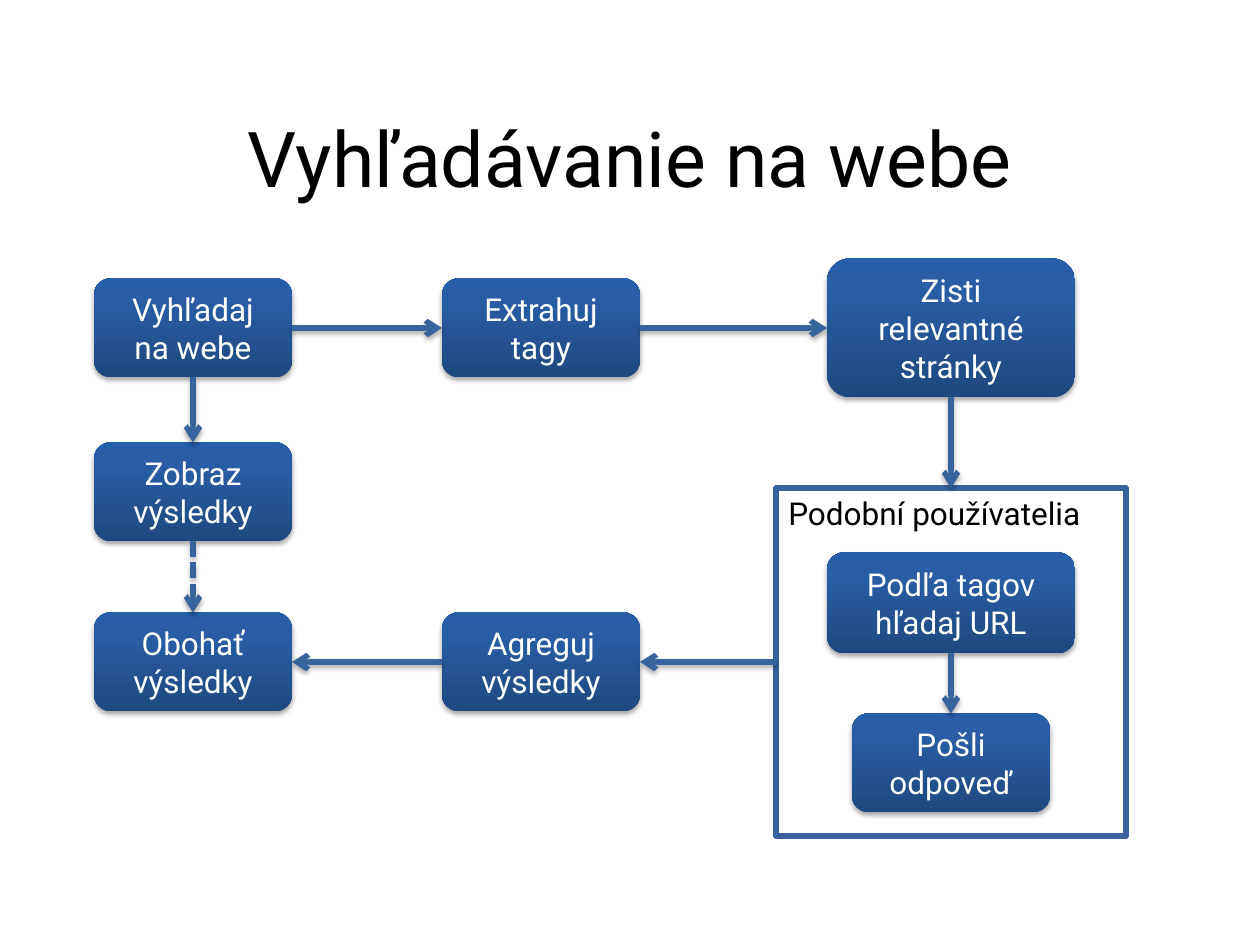
"""Build the web search flow slide."""
from dataclasses import dataclass

from pptx import Presentation
from pptx.dml.color import RGBColor
from pptx.enum.dml import MSO_LINE
from pptx.enum.shapes import MSO_CONNECTOR, MSO_SHAPE
from pptx.enum.text import MSO_ANCHOR, PP_ALIGN
from pptx.oxml import parse_xml
from pptx.oxml.ns import nsdecls
from pptx.util import Pt

PX = 914400 / 126
ROUNDED = MSO_SHAPE.FLOWCHART_ALTERNATE_PROCESS
PROCESS = MSO_SHAPE.FLOWCHART_PROCESS
STRAIGHT = MSO_CONNECTOR.STRAIGHT
DASH = MSO_LINE.SQUARE_DOT
LEFT, CENTER = PP_ALIGN.LEFT, PP_ALIGN.CENTER
TOP_ANCHOR, MIDDLE = MSO_ANCHOR.TOP, MSO_ANCHOR.MIDDLE
TOP, WEST, BOTTOM, EAST = range(4)


@dataclass(frozen=True)
class Theme:
    """Colours and type sizes of the slide."""
    font: str = "Roboto"
    title: int = 44
    body: int = 18
    dark: str = "000000"
    light: str = "FFFFFF"
    line: str = "39639D"
    line_width: int = 3
    gradient: tuple = ((0, "1F4880"), (80, "295EA7"), (100, "265EAA"))


THEME = Theme()
COL_1, COL_2, COL_3 = 193, 541, 951
ROW_1, ROW_2, ROW_3 = 328, 492, 662
SMALL, WIDE, TALL = (198, 99), (248, 101), (248, 139)

BOXES = {
    "search": ("Vyhľadaj na webe", COL_1, ROW_1, SMALL),
    "extract": ("Extrahuj tagy", COL_2, ROW_1, SMALL),
    "pages": ("Zisti relevantné stránky", COL_3, ROW_1, TALL),
    "show": ("Zobraz výsledky", COL_1, ROW_2, SMALL),
    "enrich": ("Obohať výsledky", COL_1, ROW_3, SMALL),
    "aggregate": ("Agreguj výsledky", COL_2, ROW_3, SMALL),
    "lookup": ("Podľa tagov hľadaj URL", COL_3, 603, WIDE),
    "reply": ("Pošli odpoveď", COL_3, 763, SMALL),
}

ARROWS = [
    ("search", EAST, "extract", WEST, None),
    ("extract", EAST, "pages", WEST, None),
    ("search", BOTTOM, "show", TOP, None),
    ("pages", BOTTOM, "users", TOP, None),
    ("users", WEST, "aggregate", EAST, None),
    ("aggregate", WEST, "enrich", EAST, None),
    ("show", BOTTOM, "enrich", TOP, DASH),
    ("lookup", BOTTOM, "reply", TOP, None),
]


def px(*values):
    """Turn px lengths into EMU."""
    return [round(v * PX) for v in values]


def write(sp, text, size, color, align, anchor):
    """Put one paragraph of text into a shape."""
    tf = sp.text_frame
    tf.word_wrap = True
    tf.vertical_anchor = anchor
    p = tf.paragraphs[0]
    p.text = text
    p.alignment = align
    p.font.name = THEME.font
    p.font.size = Pt(size)
    p.font.color.rgb = RGBColor.from_string(color)


def add_shadow(sp):
    """Give a shape or connector a soft shadow below it."""
    sp._element.spPr.append(parse_xml(
        f'<a:effectLst {nsdecls("a")}>'
        f'<a:outerShdw blurRad="{Pt(3.1)}" dist="{Pt(1.8)}" dir="5400000" rotWithShape="0">'
        '<a:srgbClr val="000000"><a:alpha val="35000"/></a:srgbClr>'
        '</a:outerShdw></a:effectLst>'))


def style_line(line):
    """Apply the common line colour and width."""
    line.color.rgb = RGBColor.from_string(THEME.line)
    line.width = Pt(THEME.line_width)


def add_title(slide, text):
    """Add the slide title."""
    sp = slide.shapes.add_textbox(*px(64, 93, 1132, 127))
    write(sp, text, THEME.title, THEME.dark, CENTER, MIDDLE)


def add_frame(slide, text):
    """Add the outlined frame around the user steps."""
    sp = slide.shapes.add_shape(PROCESS, *px(776, 488, 350, 348))
    sp.shadow.inherit = False
    sp.fill.background()
    style_line(sp.line)
    write(sp, text, THEME.body, THEME.dark, LEFT, TOP_ANCHOR)
    return sp


def add_box(slide, text, cx, cy, size):
    """Add a gradient step box centred on a point."""
    w, h = size
    sp = slide.shapes.add_shape(ROUNDED, *px(cx - w / 2, cy - h / 2, w, h))
    sp.line.fill.background()
    stops = "".join(
        f'<a:gs pos="{pos * 1000}"><a:srgbClr val="{color}"/></a:gs>'
        for pos, color in THEME.gradient)
    sp._element.spPr.insert(2, parse_xml(
        f'<a:gradFill rotWithShape="1" {nsdecls("a")}><a:gsLst>{stops}</a:gsLst>'
        '<a:lin ang="16200000" scaled="0"/></a:gradFill>'))
    add_shadow(sp)
    write(sp, text, THEME.body, THEME.light, CENTER, MIDDLE)
    return sp


def add_arrow(slide, start, start_site, end, end_site, dash):
    """Connect two shapes with an arrow."""
    cxn = slide.shapes.add_connector(STRAIGHT, 0, 0, 0, 0)
    cxn.begin_connect(start, start_site)
    cxn.end_connect(end, end_site)
    style_line(cxn.line)
    if dash:
        cxn.line.dash_style = dash
    cxn.line._get_or_add_ln().append(
        parse_xml(f'<a:tailEnd type="arrow" {nsdecls("a")}/>'))
    add_shadow(cxn)


def main():
    """Build and save the slide."""
    prs = Presentation()
    prs.slide_width, prs.slide_height = px(1260, 945)
    slide = prs.slides.add_slide(prs.slide_layouts[6])
    add_title(slide, "Vyhľadávanie na webe")
    steps = {"users": add_frame(slide, "Podobní používatelia")}
    for key, box in BOXES.items():
        steps[key] = add_box(slide, *box)
    for start, start_site, end, end_site, dash in ARROWS:
        add_arrow(slide, steps[start], start_site, steps[end], end_site, dash)
    prs.save("out.pptx")


if __name__ == "__main__":
    main()
